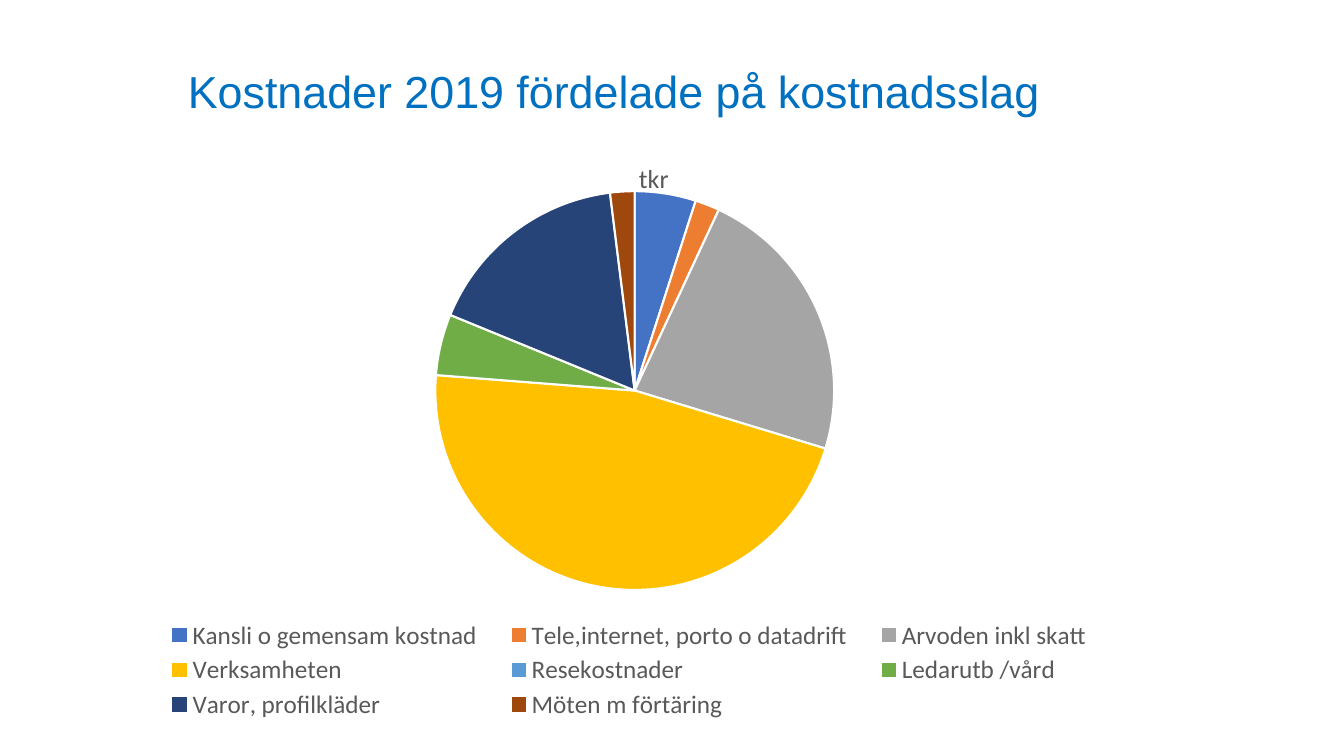
from lxml import etree
from pptx import Presentation
from pptx.chart.data import CategoryChartData
from pptx.dml.color import RGBColor
from pptx.enum.chart import XL_CHART_TYPE, XL_LEGEND_POSITION
from pptx.enum.text import MSO_ANCHOR
from pptx.oxml.ns import qn
from pptx.util import Pt

TITLE = "Kostnader 2019 fördelade på kostnadsslag"
UNIT = "tkr"
COSTS = [
    ("Kansli o gemensam kostnad", 5, "blue"),
    ("Tele,internet, porto o datadrift", 2, "orange"),
    ("Arvoden inkl skatt", 23, "gray"),
    ("Verksamheten", 47, "yellow"),
    ("Resekostnader", 0, "sky"),
    ("Ledarutb /vård", 5, "green"),
    ("Varor, profilkläder", 17, "navy"),
    ("Möten m förtäring", 2, "brown"),
]
COLORS = {
    "title": "0070C0", "text": "595959", "white": "FFFFFF",
    "blue": "4472C4", "orange": "ED7D31", "gray": "A5A5A5",
    "yellow": "FFC000", "sky": "5B9BD5", "green": "70AD47",
    "navy": "264478", "brown": "9E480E",
}
SLIDE = (1344, 756)
TITLE_BOX = (178, 40, 1074, 108)
CHART_BOX = (104, 138, 1050, 598)
PLOT_BOX = (125, 191, 1020, 399)
UNIT_BOX = (634, 156)
LEGEND_BOX = (146, 616, 966, 108)


def emu(*lengths):
    return [round(n * 914400 / 100.8) for n in lengths]


def rgb(name):
    return RGBColor.from_string(COLORS[name])


def style(font, size, color, name="Calibri"):
    font.size, font.name, font.bold = Pt(size), name, False
    font.color.rgb = rgb(color)


def add_text(tf, text, size=18, color="text", font="Calibri", spacing=None):
    p = tf.paragraphs[0]
    p.line_spacing = spacing
    r = p.add_run()
    r.text = text
    style(r.font, size, color, font)


def place(element, index, box, inner=False):
    for old in element.findall(qn("c:layout")):
        element.remove(old)
    layout = etree.Element(qn("c:layout"))
    manual = etree.SubElement(layout, qn("c:manualLayout"))
    left, top, width, height = CHART_BOX
    parts = [("layoutTarget", "inner")] if inner else []
    parts += [("xMode", "edge"), ("yMode", "edge")]
    shares = [(box[0] - left) / width, (box[1] - top) / height]
    if len(box) == 4:
        shares += [box[2] / width, box[3] / height]
    parts += [(tag, f"{share:.3f}") for tag, share in zip("xywh", shares)]
    for tag, val in parts:
        etree.SubElement(manual, qn(f"c:{tag}")).set("val", val)
    element.insert(index, layout)


prs = Presentation()
prs.slide_width, prs.slide_height = emu(*SLIDE)
s = prs.slides.add_slide(prs.slide_layouts[6])

tf = s.shapes.add_textbox(*emu(*TITLE_BOX)).text_frame
tf.word_wrap = True
tf.vertical_anchor = MSO_ANCHOR.MIDDLE
add_text(tf, TITLE, size=32, color="title", font="Arial", spacing=0.9)

data = CategoryChartData()
data.categories = [name for name, _, _ in COSTS]
data.add_series(UNIT, [value for _, value, _ in COSTS])
chart = s.shapes.add_chart(XL_CHART_TYPE.PIE, *emu(*CHART_BOX), data).chart
style(chart.font, 18, "text")

chart.has_title = True
add_text(chart.chart_title.text_frame, UNIT, size=18.6)
chart.chart_title.include_in_layout = False

chart.has_legend = True
legend = chart.legend
legend.position = XL_LEGEND_POSITION.BOTTOM
legend.include_in_layout = False
style(legend.font, 18, "text")

plot = chart.plots[0]
plot.vary_by_categories = True
for i, (_, _, color) in enumerate(COSTS):
    fmt = plot.series[0].points[i].format
    fmt.fill.solid()
    fmt.fill.fore_color.rgb = rgb(color)
    fmt.line.color.rgb = rgb("white")
    fmt.line.width = Pt(1.5)

root = chart.element
place(root.find(".//" + qn("c:plotArea")), 0, PLOT_BOX, inner=True)
place(root.find(".//" + qn("c:title")), 1, UNIT_BOX)
place(root.find(".//" + qn("c:legend")), 1, LEGEND_BOX)

prs.save("out.pptx")
